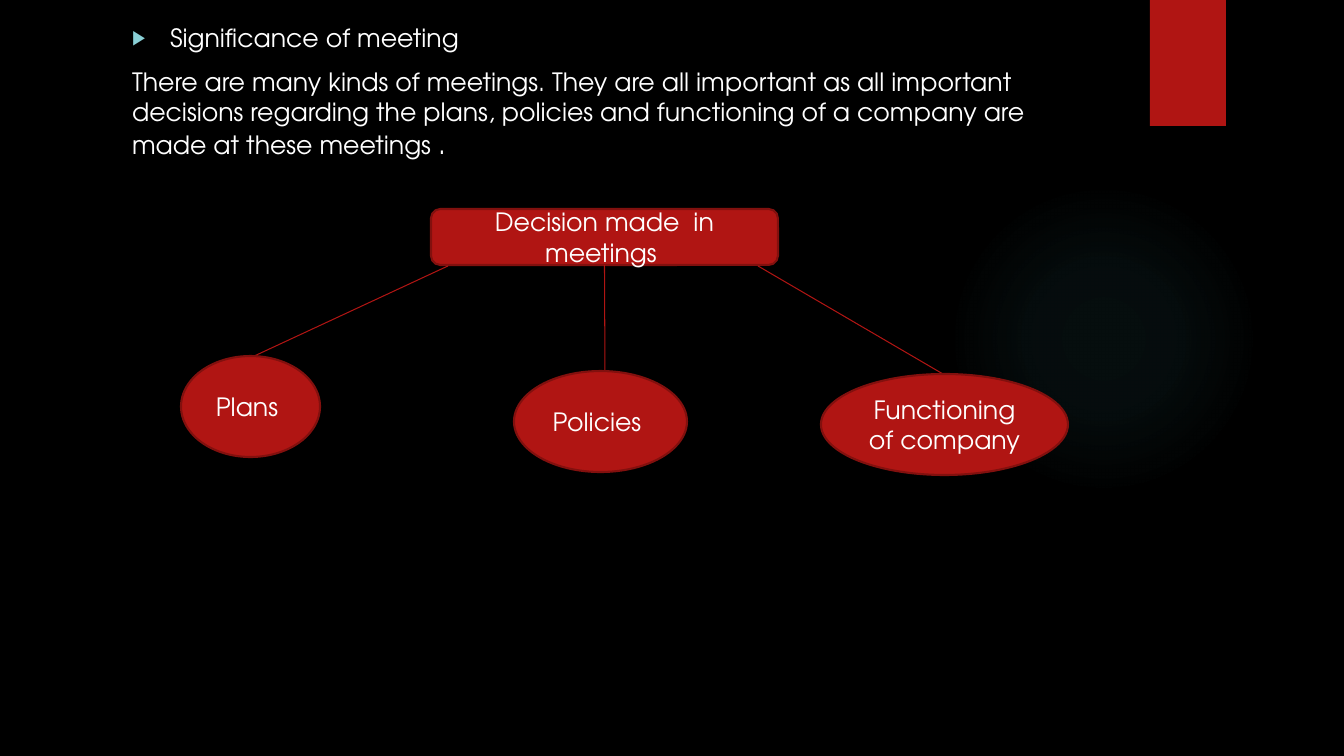
from lxml import etree
from pptx import Presentation, util as u
from pptx.dml.color import RGBColor
from pptx.enum import shapes, text
from pptx.oxml import parse_xml
from pptx.oxml.ns import qn

# Content: lengths in px
FONT = "TeX Gyre Adventor"
COLORS = {"back": "000000", "red": "B01513", "edge": "82100E",
          "text": "FFFFFF", "bullet": "8AD0D6", "glow": "50B9C1"}
HEADING = "Significance of meeting"
BODY = ("There are many kinds of meetings. They are all important as all important "
        "decisions regarding the plans, policies and functioning of a company are "
        "made at these meetings ")
BODY_END = "."
BODY_AREA = (122, 17, 986, 715)
GLOW_AREA = (949, 184, 310, 310)
GLOW_STOPS = [(0, 7), (36, 6), (69, 0)]  # position and opacity in percent
TAB_AREA = (1150, 0, 76, 126)
ROOT = ("Decision made  in meetings ", (431, 209, 347, 56))
# label, area, line start, line end
BRANCHES = [
    ("Plans ", (181, 356, 139, 101), (448, 266), (250, 358)),
    ("Policies ", (514, 371, 173, 101), (605, 266), (605, 374)),
    ("Functioning of company ", (821, 374, 247, 101), (758, 266), (943, 374)),
]
A_NS = "http://schemas.openxmlformats.org/drawingml/2006/main"


def px(*lengths):
    return [u.Emu(round(length * 914400 / 100.8)) for length in lengths]


def color(name):
    return RGBColor.from_string(COLORS[name])


def set_font(para):
    para.font.name, para.font.size = FONT, u.Pt(18)
    para.font.color.rgb = color("text")


def add_block(kind, area, label=None):
    block = page.shapes.add_shape(kind, *px(*area))
    block.shadow.inherit = False
    block.fill.solid()
    block.fill.fore_color.rgb = color("red")
    if label is None:
        block.line.fill.background()
        return block
    block.line.color.rgb = color("edge")
    block.line.width = u.Pt(1.5)
    frame = block.text_frame
    frame.word_wrap = True
    frame.vertical_anchor = text.MSO_ANCHOR.MIDDLE
    para = frame.paragraphs[0]
    para.text, para.alignment = label, text.PP_ALIGN.CENTER
    set_font(para)
    return block


deck = Presentation()
deck.slide_width, deck.slide_height = px(1344, 756)
page = deck.slides.add_slide(deck.slide_layouts[1])
page.background.fill.solid()
page.background.fill.fore_color.rgb = color("back")
title, body = page.placeholders
title.element.getparent().remove(title.element)

# Soft glow and red tab behind the content
glow = add_block(shapes.MSO_SHAPE.OVAL, GLOW_AREA)
stops = "".join(
    f'<a:gs pos="{place * 1000}"><a:srgbClr val="{COLORS["glow"]}">'
    f'<a:alpha val="{opacity * 1000}"/></a:srgbClr></a:gs>'
    for place, opacity in GLOW_STOPS)
gradient = parse_xml(
    f'<a:gradFill xmlns:a="{A_NS}"><a:gsLst>{stops}</a:gsLst><a:path path="circle">'
    '<a:fillToRect l="50000" t="50000" r="50000" b="50000"/></a:path></a:gradFill>')
solid = glow.element.spPr.find(qn("a:solidFill"))
solid.getparent().replace(solid, gradient)
add_block(shapes.MSO_SHAPE.RECTANGLE, TAB_AREA)

# Heading and explanation
page.shapes._spTree.append(body.element)
body.left, body.top, body.width, body.height = px(*BODY_AREA)
frame = body.text_frame
frame.word_wrap = True
frame.auto_size = text.MSO_AUTO_SIZE.NONE
heading, explanation = frame.paragraphs[0], frame.add_paragraph()
heading.text = HEADING
explanation.text = BODY
span = explanation.add_run()
span.text, span.font.size = BODY_END, u.Pt(20)

indent = px(38)[0]
props = heading._p.get_or_add_pPr()
props.set("marL", str(indent))
props.set("indent", str(-indent))
bullet_color = etree.SubElement(props, qn("a:buClr"))
etree.SubElement(bullet_color, qn("a:srgbClr"), val=COLORS["bullet"])
etree.SubElement(props, qn("a:buSzPct"), val="80000")
etree.SubElement(props, qn("a:buChar"), char="▶")
props = explanation._p.get_or_add_pPr()
props.set("marL", "0")
props.set("indent", "0")
etree.SubElement(props, qn("a:buNone"))
for para, gap in ((heading, 0), (explanation, 10)):
    para.space_before = u.Pt(gap)
    set_font(para)

# Decision tree
root = add_block(shapes.MSO_SHAPE.ROUNDED_RECTANGLE, ROOT[1], ROOT[0])
root_middle = root.left + root.width // 2
for label, area, start, end in BRANCHES:
    line = page.shapes.add_connector(shapes.MSO_CONNECTOR.STRAIGHT, *px(*start, *end))
    line.line.color.rgb = color("red")
    line.line.width = u.Pt(0.75)
    etree.SubElement(line.element.spPr, qn("a:effectLst"))
    if abs(line.begin_x - root_middle) <= px(1)[0]:
        line.begin_connect(root, 2)
    add_block(shapes.MSO_SHAPE.OVAL, area, label)

deck.save("out.pptx")
